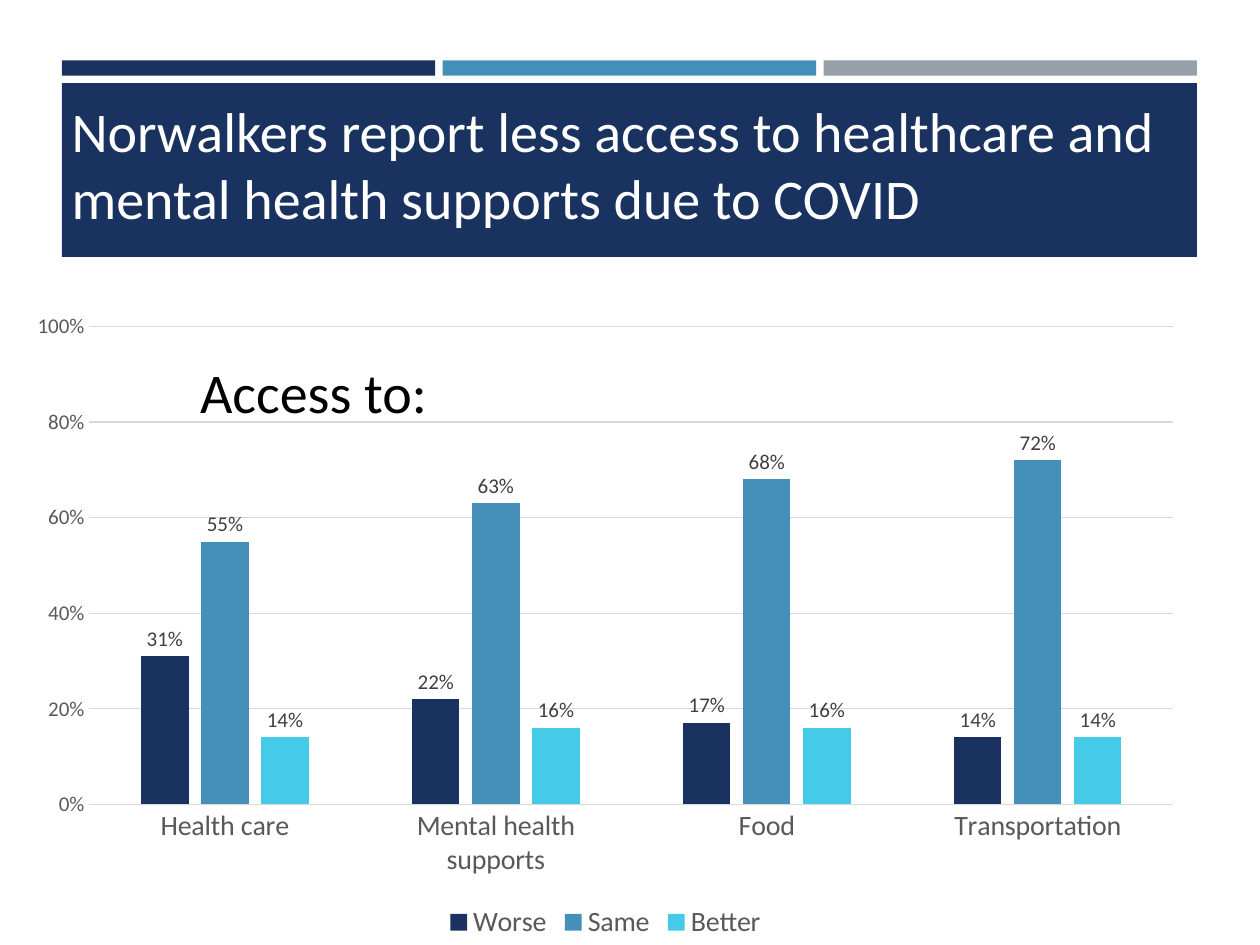
import pptx
import pptx.util
import pptx.chart.data
from pptx.dml.color import RGBColor
from pptx.enum.chart import XL_CHART_TYPE, XL_LABEL_POSITION, XL_LEGEND_POSITION, XL_TICK_MARK
from pptx.enum.shapes import MSO_SHAPE
from pptx.enum.text import MSO_ANCHOR, MSO_AUTO_SIZE

NAVY = RGBColor(0x1A, 0x32, 0x60)
BLUE = RGBColor(0x45, 0x90, 0xB8)
CYAN = RGBColor(0x45, 0xCB, 0xE8)
SILVER = RGBColor(0x96, 0x9F, 0xA7)
GRID = RGBColor(0xD9, 0xD9, 0xD9)
GREY = RGBColor(0x59, 0x59, 0x59)
DARK = RGBColor(0x40, 0x40, 0x40)
WHITE = RGBColor(0xFF, 0xFF, 0xFF)
BLACK = RGBColor(0, 0, 0)
FONT = "Calibri"

# Content
TITLE = "Norwalkers report less access to healthcare and mental health supports due to COVID"
CAPTION = "Access to:"
CATEGORIES = ["Health care", "Mental health supports", "Food", "Transportation"]
SERIES = [
    ("Worse", NAVY, (0.31, 0.22, 0.17, 0.14)),
    ("Same", BLUE, (0.55, 0.63, 0.68, 0.72)),
    ("Better", CYAN, (0.14, 0.16, 0.16, 0.14)),
]
STRIPES = [NAVY, BLUE, SILVER]

# Layout in inches
LEFT, WIDTH = 0.49, 9.01
GAP = 0.06
STRIPE_TOP, STRIPE_HEIGHT = 0.48, 0.12


def inches(*lengths):
    return [pptx.util.Inches(n) for n in lengths]


def style(font, size, color):
    font.name = FONT
    font.size = pptx.util.Pt(size)
    font.color.rgb = color


def add_bar(s, box, color):
    sp = s.shapes.add_shape(MSO_SHAPE.RECTANGLE, *inches(*box))
    sp.shadow.inherit = False
    sp.fill.solid()
    sp.fill.fore_color.rgb = color
    sp.line.fill.background()


def add_text(s, box, text, color, wrap, anchor):
    tf = s.shapes.add_textbox(*inches(*box)).text_frame
    tf.word_wrap = wrap
    tf.vertical_anchor = anchor
    r = tf.paragraphs[0].add_run()
    r.text = text
    style(r.font, 32, color)
    return tf


def grey_line(line):
    line.color.rgb = GRID
    line.width = pptx.util.Pt(0.75)


def add_access_chart(s, box):
    data = pptx.chart.data.CategoryChartData(number_format="0%")
    data.categories = CATEGORIES
    for name, _, values in SERIES:
        data.add_series(name, values)
    chart = s.shapes.add_chart(XL_CHART_TYPE.COLUMN_CLUSTERED, *inches(*box), data).chart
    style(chart.font, 10, BLACK)
    chart.has_title = False

    # Columns and their labels
    plot = chart.plots[0]
    plot.gap_width, plot.overlap = 219, -27
    plot.vary_by_categories = False
    for series, (_, color, _) in zip(plot.series, SERIES):
        series.format.fill.solid()
        series.format.fill.fore_color.rgb = color
        labels = series.data_labels
        labels.show_value = True
        labels.number_format = "0%"
        labels.number_format_is_linked = False
        labels.position = XL_LABEL_POSITION.OUTSIDE_END
        style(labels.font, 12, DARK)

    # Axes
    cat, val = chart.category_axis, chart.value_axis
    for axis, size in ((cat, 16), (val, 12)):
        axis.major_tick_mark = axis.minor_tick_mark = XL_TICK_MARK.NONE
        style(axis.tick_labels.font, size, GREY)
    grey_line(cat.format.line)
    val.format.line.fill.background()
    val.minimum_scale, val.maximum_scale, val.major_unit = 0, 1, 0.2
    val.tick_labels.number_format = "0%"
    val.tick_labels.number_format_is_linked = False
    val.has_major_gridlines = True
    grey_line(val.major_gridlines.format.line)

    # Legend
    chart.has_legend = True
    chart.legend.position = XL_LEGEND_POSITION.BOTTOM
    chart.legend.include_in_layout = False
    style(chart.legend.font, 16, GREY)


def main():
    prs = pptx.Presentation()
    prs.slide_width, prs.slide_height = inches(10, 7.5)
    s = prs.slides.add_slide(prs.slide_layouts[6])

    # Stripes above the title band
    stripe = (WIDTH - GAP * (len(STRIPES) - 1)) / len(STRIPES)
    for i, color in enumerate(STRIPES):
        add_bar(s, (LEFT + i * (stripe + GAP), STRIPE_TOP, stripe, STRIPE_HEIGHT), color)

    # Title band
    add_bar(s, (LEFT, STRIPE_TOP + STRIPE_HEIGHT + GAP, WIDTH, 1.38), NAVY)
    add_text(s, (0.47, 0.68, 9.03, 1.2), TITLE, WHITE, True, MSO_ANCHOR.BOTTOM)

    # Chart with its caption on top
    add_access_chart(s, (0.11, 2.39, 9.39, 5.11))
    tf = add_text(s, (1.49, 2.79, 2.16, 0.64), CAPTION, BLACK, False, MSO_ANCHOR.TOP)
    tf.auto_size = MSO_AUTO_SIZE.SHAPE_TO_FIT_TEXT

    prs.save("out.pptx")


if __name__ == "__main__":
    main()
